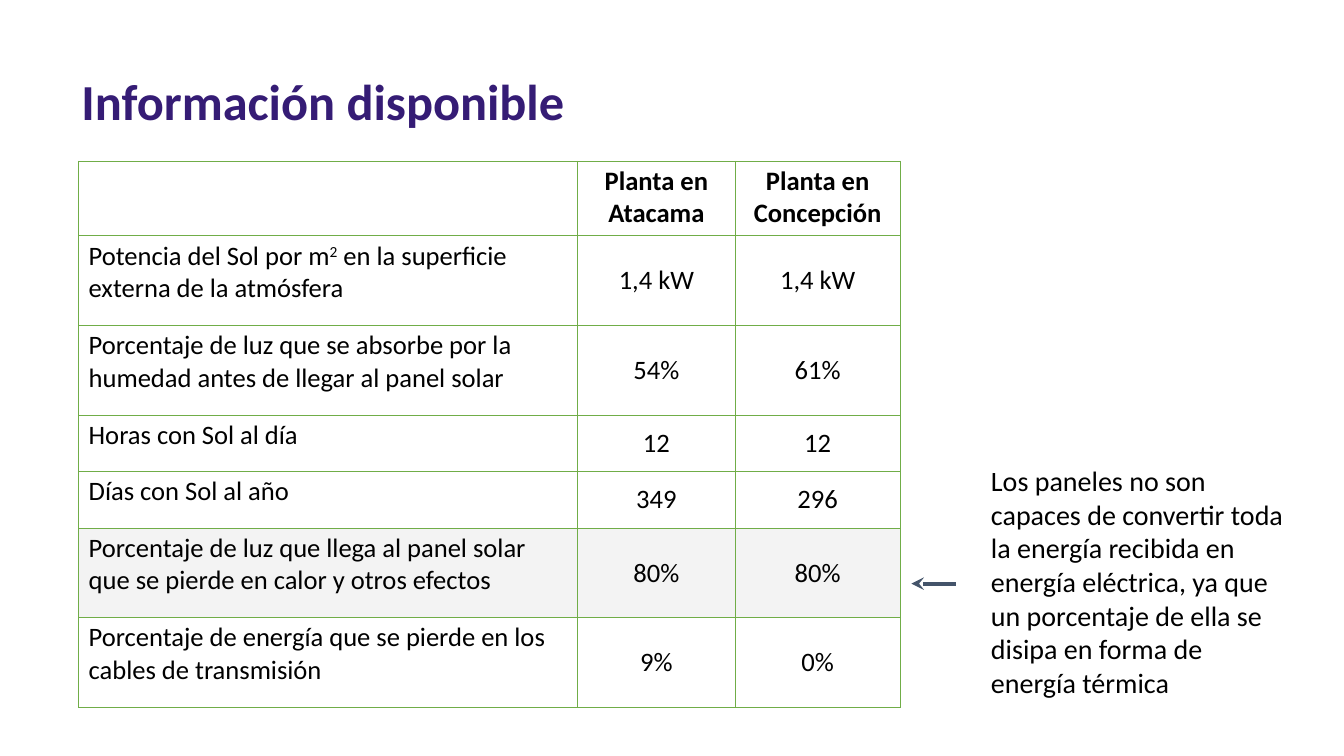
"""Build the slide with the data available on two solar plants."""
from lxml.etree import SubElement
from pptx import Presentation
from pptx.dml.color import RGBColor
from pptx.enum.shapes import MSO_CONNECTOR
from pptx.enum.text import MSO_ANCHOR, PP_ALIGN
from pptx.oxml import parse_xml
from pptx.oxml.ns import nsdecls, qn
from pptx.util import Inches, Pt

COLORS = {"title": "351C75", "text": "000000", "border": "70AD47",
          "highlight": "F3F3F3", "arrow": "44546A"}
FONT = "Calibri"
COL_WIDTHS = [4.95, 1.56, 1.64]
ROW_HEIGHTS = [0.74, 0.89, 0.89, 0.56, 0.56, 0.89, 0.89]
HIGHLIGHT_ROW = 5
ROWS = [
    ("", "Planta en Atacama", "Planta en Concepción"),
    (("Potencia del Sol por m", "2", " en la superficie externa de la atmósfera"),
     "1,4 kW", "1,4 kW"),
    ("Porcentaje de luz que se absorbe por la humedad antes de llegar al panel solar",
     "54%", "61%"),
    ("Horas con Sol al día", "12", "12"),
    ("Días con Sol al año", "349", "296"),
    ("Porcentaje de luz que llega al panel solar que se pierde en calor y otros efectos",
     "80%", "80%"),
    ("Porcentaje de energía que se pierde en los cables de transmisión", "9%", "0%"),
]
NOTE = ("Los paneles no son capaces de convertir toda la energía recibida en energía "
        "eléctrica, ya que un porcentaje de ella se disipa en forma de energía térmica")


def rgb(name):
    """Return the named colour."""
    return RGBColor.from_string(COLORS[name])


def style_run(r, size, color="text", bold=False):
    """Set the font of a run."""
    r.font.name = FONT
    r.font.size = Pt(size)
    r.font.bold = bold
    r.font.color.rgb = rgb(color)


def add_text(s, box, text, size, color="text", bold=False):
    """Add a wrapped text box."""
    tf = s.shapes.add_textbox(*map(Inches, box)).text_frame
    tf.word_wrap = True
    tf.text = text
    style_run(tf.paragraphs[0].runs[0], size, color, bold)


def set_borders(cell):
    """Draw the four borders of a cell."""
    tc_pr = cell._tc.get_or_add_tcPr()
    for i, side in enumerate("LRTB"):
        tc_pr.insert(i, parse_xml(
            f'<a:ln{side} {nsdecls("a")} w="{Pt(0.75)}"><a:solidFill>'
            f'<a:srgbClr val="{COLORS["border"]}"/></a:solidFill></a:ln{side}>'))


def fill_cell(cell, content, row, col):
    """Write and format one table cell."""
    cell.margin_left = cell.margin_right = Inches(0.1)
    cell.margin_top = cell.margin_bottom = Inches(0.04)
    if row == HIGHLIGHT_ROW:
        cell.fill.solid()
        cell.fill.fore_color.rgb = rgb("highlight")
    else:
        cell.fill.background()
    set_borders(cell)
    if row and col:
        cell.vertical_anchor = MSO_ANCHOR.MIDDLE
    p = cell.text_frame.paragraphs[0]
    p.alignment = PP_ALIGN.CENTER if col else PP_ALIGN.LEFT
    parts = (content,) if isinstance(content, str) else content
    for i, part in enumerate(filter(None, parts)):
        r = p.add_run()
        r.text = part
        style_run(r, 19, bold=row == 0)
        if i == 1:
            r._r.get_or_add_rPr().set("baseline", "30000")


def add_data_table(s, left, top):
    """Add the table that compares both plants."""
    table = s.shapes.add_table(
        len(ROWS), len(COL_WIDTHS), Inches(left), Inches(top),
        Inches(sum(COL_WIDTHS)), Inches(sum(ROW_HEIGHTS))).table
    table.first_row = table.horz_banding = False
    for column, width in zip(table.columns, COL_WIDTHS):
        column.width = Inches(width)
    for i, (height, contents) in enumerate(zip(ROW_HEIGHTS, ROWS)):
        table.rows[i].height = Inches(height)
        for j, content in enumerate(contents):
            fill_cell(table.cell(i, j), content, i, j)


def add_note(s, left, top, width, height):
    """Add the explanation and the arrow from it to the highlighted row."""
    add_text(s, (left, top, width, height), NOTE, 20)
    y = Inches(top + height / 2 + 0.01)
    arrow = s.shapes.add_connector(
        MSO_CONNECTOR.STRAIGHT, Inches(left - 0.25), y, Inches(left - 0.69), y)
    arrow.line.color.rgb = rgb("arrow")
    arrow.line.width = Pt(3)
    SubElement(arrow.line._get_or_add_ln(), qn("a:tailEnd"), type="stealth")
    SubElement(arrow._element.spPr, qn("a:effectLst"))


def main():
    """Build and save the presentation."""
    prs = Presentation()
    prs.slide_width, prs.slide_height = Inches(13.33), Inches(7.5)
    s = prs.slides.add_slide(prs.slide_layouts[6])
    add_text(s, (0.71, 0.65, 8.59, 0.71), "Información disponible", 36, "title", True)
    add_data_table(s, 0.78, 1.6)
    add_note(s, 9.73, 4.55, 3.15, 2.46)
    prs.save("out.pptx")


if __name__ == "__main__":
    main()
